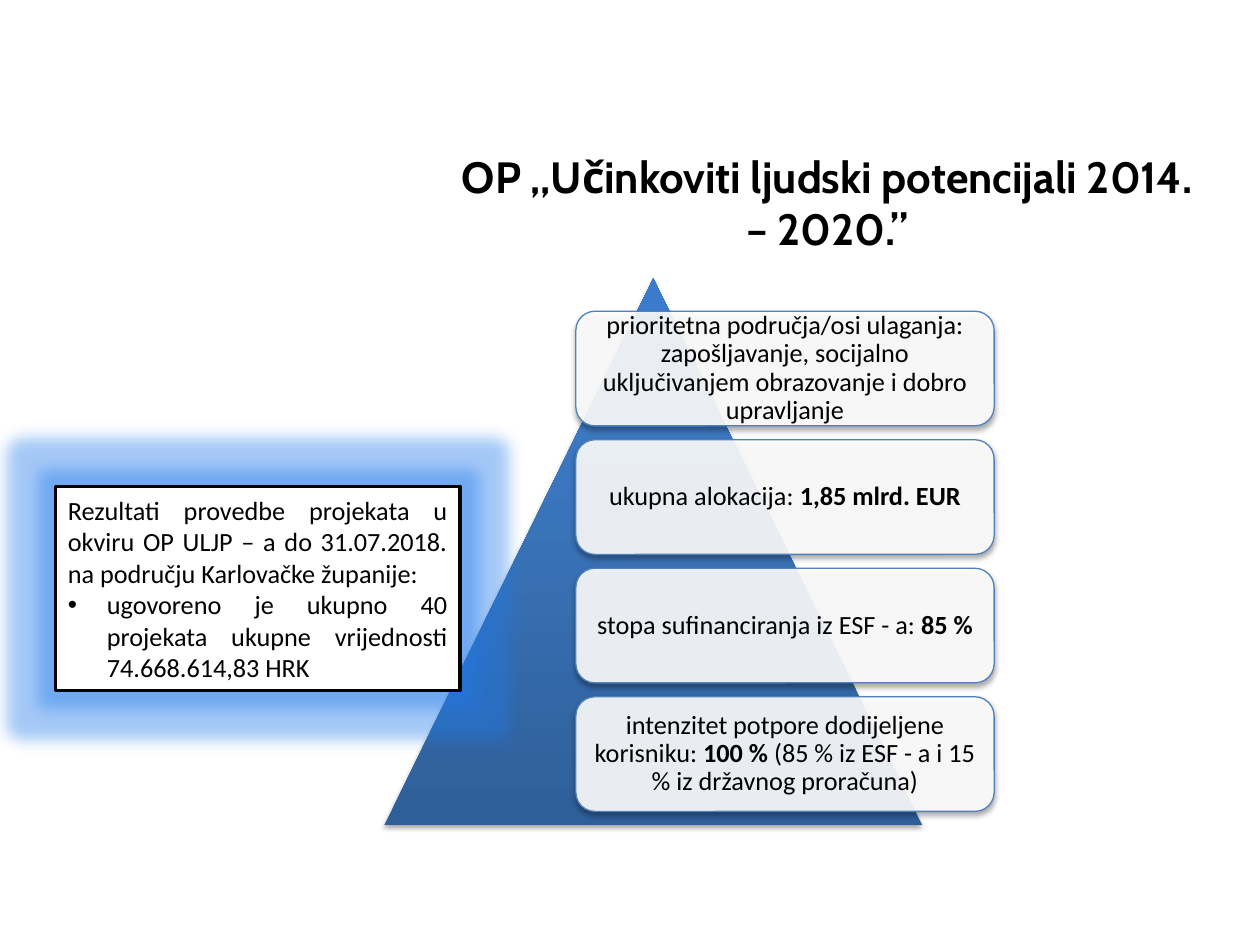
from dataclasses import dataclass

from lxml.etree import SubElement
from pptx import Presentation
from pptx.dml.color import RGBColor
from pptx.enum.shapes import MSO_SHAPE as Shape
from pptx.enum.text import MSO_ANCHOR as Anchor, MSO_AUTO_SIZE as AutoSize, PP_ALIGN as Align
from pptx.oxml.ns import qn
from pptx.util import Inches, Pt

W, H = 10, 7.5
COLORS = {"text": "000000", "paper": "FFFFFF", "edge": "4F81BD", "glow": "1F7AEB"}
PYRAMID_STOPS = [(0, "2F5F99"), (80, "3D7CC7"), (100, "3A7CCB")]
BODY = {"name": "Calibri", "size": Pt(15), "bold": False}
TITLE = {"name": "Cabin", "size": Pt(25), "bold": True}


@dataclass
class Box:
    """A place on the slide, in inches."""
    left: float
    top: float
    width: float
    height: float

    def emu(self) -> list:
        return [Inches(v) for v in (self.left, self.top, self.width, self.height)]


@dataclass
class Run:
    text: str
    bold: bool = False


# Cards form one column with an equal pitch
CARD = Box(0.457 * W, 2.47, 0.332 * W, 0.91)
CARD_PITCH = 1.02
CARDS = [
    [Run("prioritetna područja/osi ulaganja: zapošljavanje, socijalno "
         "uključivanjem obrazovanje i dobro upravljanje")],
    [Run("ukupna alokacija: "), Run("1,85 mlrd. EUR", True)],
    [Run("stopa sufinanciranja iz ESF - a: "), Run("85 %", True)],
    [Run("intenzitet potpore dodijeljene korisniku: "), Run("100 %", True),
     Run(" (85 % iz ESF - a i 15 % iz državnog proračuna)")],
]
RESULTS = [
    "Rezultati provedbe projekata u okviru OP ULJP – a do 31.07.2018. "
    "na području Karlovačke županije:",
    "ugovoreno je ukupno 40 projekata ukupne vrijednosti 74.668.614,83 HRK",
]


def rgb(name: str) -> RGBColor:
    return RGBColor.from_string(COLORS[name])


def add_color(parent, value: str, alpha: int = 100) -> None:
    clr = SubElement(parent, qn("a:srgbClr"), val=value)
    if alpha < 100:
        SubElement(clr, qn("a:alpha"), val=str(alpha * 1000))


def add_effect(sp, tag: str, color: str, alpha: int, **attrs: int) -> None:
    effects = sp._element.spPr.find(qn("a:effectLst"))
    effect = SubElement(effects, qn(tag), {k: str(int(v)) for k, v in attrs.items()})
    add_color(effect, COLORS[color], alpha)


def add_shadow(sp) -> None:
    add_effect(sp, "a:outerShdw", "text", 35, blurRad=Pt(3.1), dist=Pt(1.8),
               dir=90 * 60000, rotWithShape=0)


def add_block(s, kind, box: Box, line: str, width: float):
    sp = s.shapes.add_shape(kind, *box.emu())
    sp.shadow.inherit = False
    sp.fill.solid()
    sp.fill.fore_color.rgb = rgb("paper")
    sp.line.color.rgb = rgb(line)
    sp.line.width = Pt(width)
    return sp


def write(p, runs: list[Run], font: dict, align) -> None:
    p.alignment = align
    for run in runs:
        r = p.add_run()
        r.text = run.text
        for key, value in (font | {"bold": run.bold or font["bold"]}).items():
            setattr(r.font, key, value)
        r.font.color.rgb = rgb("text")


def add_pyramid(s) -> None:
    sp = s.shapes.add_shape(Shape.ISOSCELES_TRIANGLE,
                            *Box(0.305 * W, 2.21, 0.427 * W, 4.34).emu())
    sp.shadow.inherit = False
    sp.line.fill.background()
    sp.fill.gradient()
    sp.fill.gradient_angle = 90
    stops = sp._element.spPr.find(".//" + qn("a:gsLst"))
    stops[:] = []
    for pos, color in PYRAMID_STOPS:
        add_color(SubElement(stops, qn("a:gs"), pos=str(pos * 1000)), color)
    add_shadow(sp)


def add_card(s, row: int, runs: list[Run]) -> None:
    box = Box(CARD.left, CARD.top + row * CARD_PITCH, CARD.width, CARD.height)
    sp = add_block(s, Shape.ROUNDED_RECTANGLE, box, "edge", 0.75)
    fill = sp._element.spPr.find(qn("a:solidFill"))
    SubElement(fill[0], qn("a:alpha"), val="90000")
    add_shadow(sp)
    tf = sp.text_frame
    for side in ("left", "top", "right", "bottom"):
        setattr(tf, f"margin_{side}", Inches(0.06))
    tf.word_wrap, tf.vertical_anchor = True, Anchor.MIDDLE
    p = tf.paragraphs[0]
    p.line_spacing = 0.9
    write(p, runs, BODY, Align.CENTER)


def add_results(s) -> None:
    sp = add_block(s, Shape.RECTANGLE, Box(0.044 * W, 3.86, 0.321 * W, 1.62), "text", 2)
    add_effect(sp, "a:glow", "glow", 40, rad=Pt(18))
    tf = sp.text_frame
    tf.word_wrap, tf.auto_size = True, AutoSize.SHAPE_TO_FIT_TEXT
    intro, item = tf.paragraphs[0], tf.add_paragraph()
    pPr = item._p.get_or_add_pPr()
    pPr.set("marL", str(Inches(0.31)))
    pPr.set("indent", str(-Inches(0.31)))
    SubElement(pPr, qn("a:buFont"), typeface="Arial")
    SubElement(pPr, qn("a:buChar"), char="•")
    for p, text in zip((intro, item), RESULTS):
        write(p, [Run(text)], BODY, Align.JUSTIFY)


def main() -> None:
    prs = Presentation()
    prs.slide_width, prs.slide_height = Inches(W), Inches(H)
    s = prs.slides.add_slide(prs.slide_layouts[5])

    # Title
    title = s.shapes.title
    box = Box(0.348 * W, 1.03, 0.617 * W, 1.15)
    title.left, title.top, title.width, title.height = box.emu()
    title.text_frame.vertical_anchor = Anchor.MIDDLE
    write(title.text_frame.paragraphs[0],
          [Run("OP „Učinkoviti ljudski potencijali 2014. – 2020.”")], TITLE, Align.CENTER)

    # Pyramid list and results panel
    add_pyramid(s)
    for row, runs in enumerate(CARDS):
        add_card(s, row, runs)
    add_results(s)
    prs.save("out.pptx")


if __name__ == "__main__":
    main()
